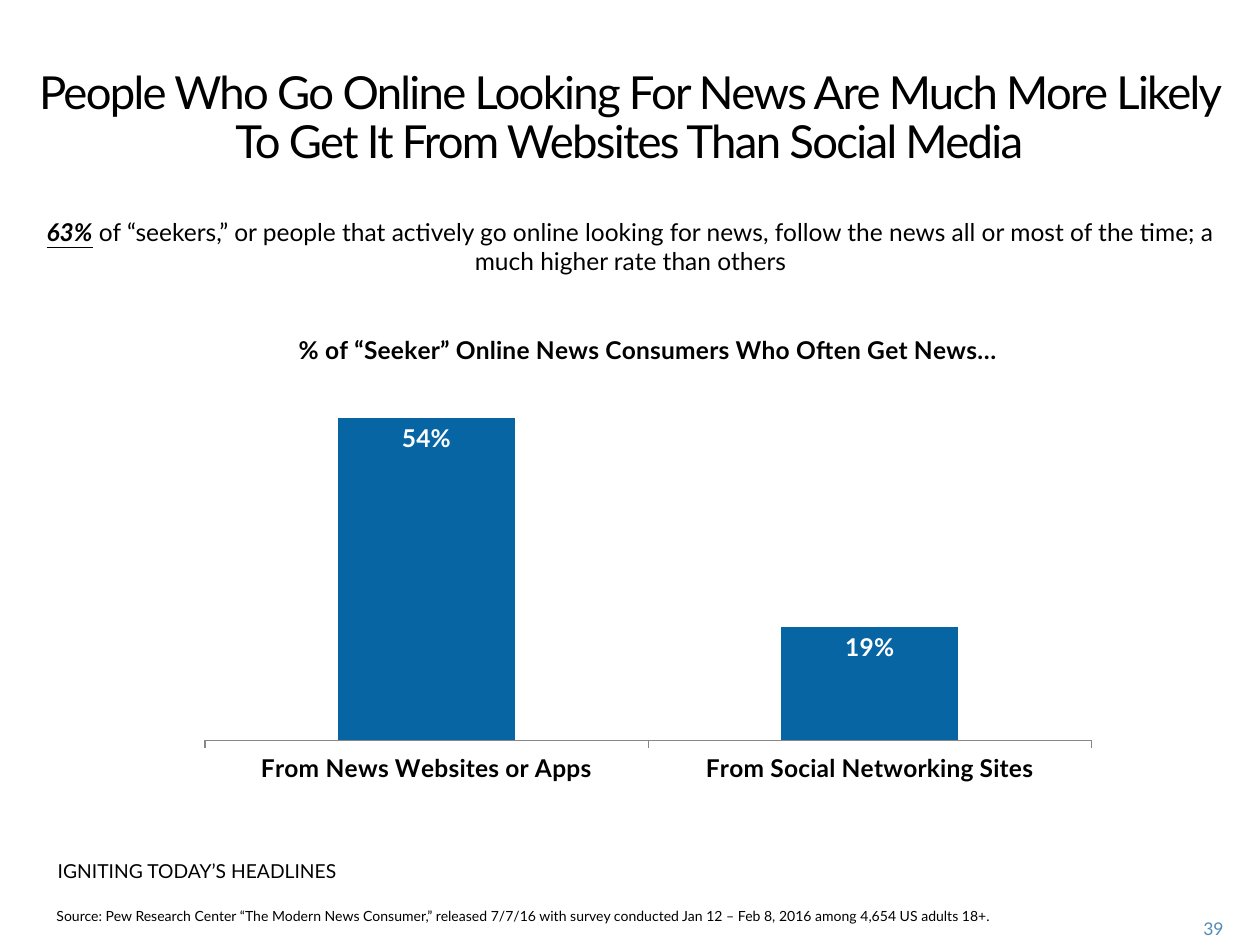
from lxml import etree
from pptx import Presentation
from pptx import util as u
from pptx.chart.data import CategoryChartData
from pptx.dml.color import RGBColor
from pptx.enum import chart as ch, text
from pptx.oxml.ns import qn

FONT = "Lato"
COLORS = {"ink": "000000", "bar": "0765A3", "label": "FFFFFF", "page": "508ABA"}
LEFT, CENTER, RIGHT = text.PP_ALIGN.LEFT, text.PP_ALIGN.CENTER, text.PP_ALIGN.RIGHT

TITLE = ("People Who Go Online Looking For News Are Much More Likely "
         "To Get It From Websites Than Social Media")
STATEMENT = [
    ("63%", True),
    (" of “seekers,” or people that actively go online looking for news, "
     "follow the news all or most of the time; a much higher rate than others", False),
]
CHART_TITLE = "% of “Seeker” Online News Consumers Who Often Get News…"
SHARES = {"From News Websites or Apps": 0.54, "From Social Networking Sites": 0.19}
CHART_BOX = (1.48, 2.47, 7.33, 3.82)
NOTES = [
    ("IGNITING TODAY’S HEADLINES", (0.36, 6.77, 2.72, 0.47), 11, LEFT, "ink"),
    ("Source: Pew Research Center “The Modern News Consumer,” released 7/7/16 with "
     "survey conducted Jan 12 – Feb 8, 2016 among 4,654 US adults 18+.",
     (0.35, 7.15, 7.83, 0.23), 8, LEFT, "ink"),
    ("39", (9.2, 7.24, 0.61, 0.25), 10, RIGHT, "page"),
]


def style(font, size, color="ink", bold=False):
    font.name = FONT
    font.size = u.Pt(size)
    font.bold = bold
    font.color.rgb = RGBColor.from_string(COLORS[color])


def fill_box(sp, box, runs, size, align, color="ink"):
    sp.left, sp.top, sp.width, sp.height = map(u.Inches, box)
    tf = sp.text_frame
    tf.word_wrap = True
    tf.auto_size = text.MSO_AUTO_SIZE.NONE
    tf.vertical_anchor = text.MSO_ANCHOR.TOP
    p = tf.paragraphs[0]
    p.alignment = align
    p.space_before = u.Pt(0)
    for words, strong in runs:
        r = p.add_run()
        r.text = words
        style(r.font, size, color, strong)
        r.font.italic = r.font.underline = strong
    return p


def add_share_chart(s):
    data = CategoryChartData(number_format="0%")
    data.categories = list(SHARES)
    data.add_series("Series 1", list(SHARES.values()))
    chart = s.shapes.add_chart(ch.XL_CHART_TYPE.COLUMN_STACKED,
                               *map(u.Inches, CHART_BOX), data).chart
    style(chart.font, 11)
    chart.has_legend = False
    chart.has_title = True
    r = chart.chart_title.text_frame.paragraphs[0].add_run()
    r.text = CHART_TITLE
    style(r.font, 14, bold=True)
    chart.chart_title.include_in_layout = False

    values = chart.value_axis
    values.minimum_scale, values.maximum_scale = 0, 0.6
    values.has_major_gridlines = False
    values.visible = False
    cats = chart.category_axis
    cats.major_tick_mark = ch.XL_TICK_MARK.OUTSIDE
    style(cats.tick_labels.font, 14, bold=True)

    plot = chart.plots[0]
    plot.gap_width, plot.overlap = 150, 100
    plot.vary_by_categories = False
    series = plot.series[0]
    series.format.fill.solid()
    series.format.fill.fore_color.rgb = RGBColor.from_string(COLORS["bar"])
    labels = series.data_labels
    labels.show_value = True
    labels.number_format, labels.number_format_is_linked = "0%", False
    labels.position = ch.XL_LABEL_POSITION.INSIDE_END
    style(labels.font, 14, "label", True)


def main():
    prs = Presentation()
    prs.slide_width, prs.slide_height = u.Inches(10), u.Inches(7.5)
    s = prs.slides.add_slide(prs.slide_layouts[1])

    p = fill_box(s.shapes.title, (0.18, 0.5, 9.63, 0.68), [(TITLE, False)], 26, CENTER)
    p.line_spacing = u.Pt(28)
    p.runs[0].font._element.set("spc", "-100")

    p = fill_box(s.placeholders[1], (0.19, 1.67, 9.63, 0.4), STATEMENT, 14, CENTER)
    pPr = p._p.get_or_add_pPr()
    pPr.set("marL", "0")
    pPr.set("indent", "0")
    etree.SubElement(pPr, qn("a:buNone"))

    add_share_chart(s)
    for words, box, size, align, color in NOTES:
        sp = s.shapes.add_textbox(0, 0, 0, 0)
        fill_box(sp, box, [(words, False)], size, align, color)

    prs.save("out.pptx")


if __name__ == "__main__":
    main()
